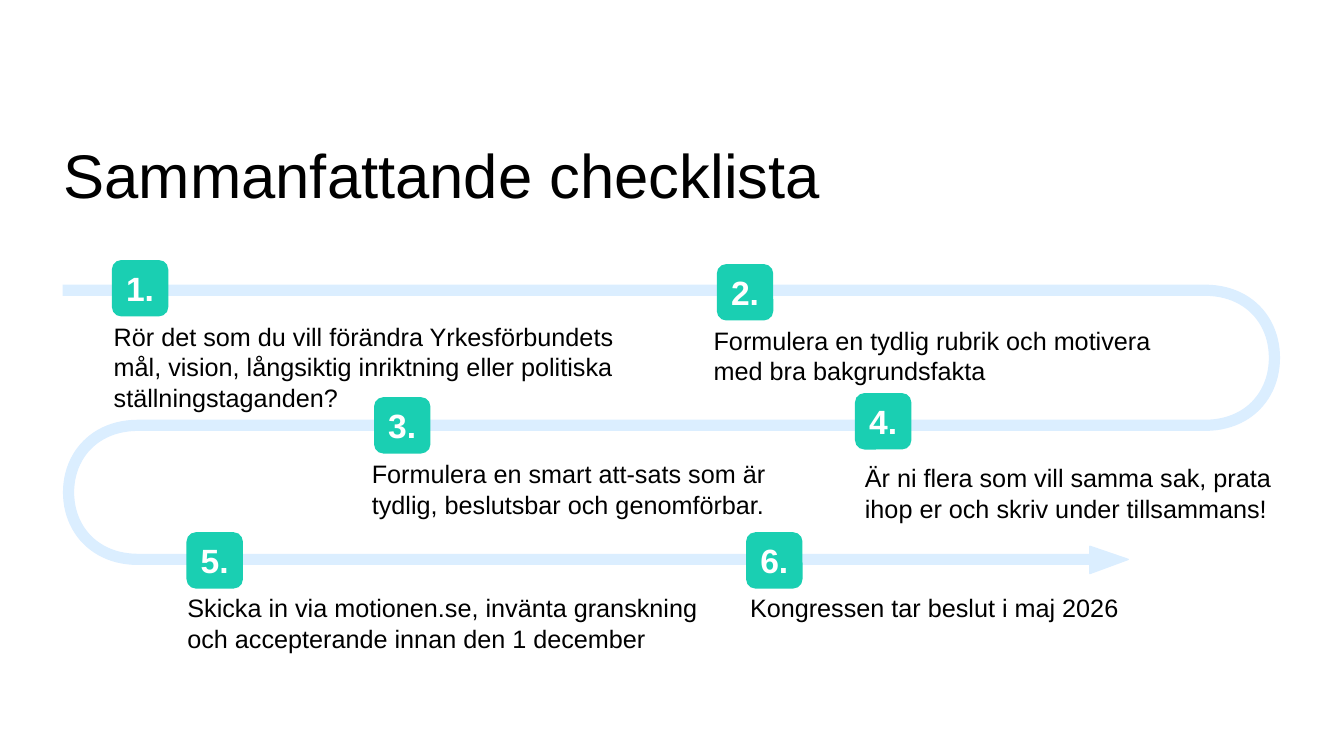
from pptx import Presentation
from pptx.dml.color import RGBColor
from pptx.enum.shapes import MSO_SHAPE
from pptx.enum.text import MSO_ANCHOR, MSO_AUTO_SIZE, PP_ALIGN
from pptx.util import Inches, Pt

ROUNDED = MSO_SHAPE.ROUNDED_RECTANGLE
TOP, MIDDLE, BOTTOM = MSO_ANCHOR.TOP, MSO_ANCHOR.MIDDLE, MSO_ANCHOR.BOTTOM
FIT_SHAPE, FIXED = MSO_AUTO_SIZE.SHAPE_TO_FIT_TEXT, MSO_AUTO_SIZE.NONE
LEFT, CENTER = PP_ALIGN.LEFT, PP_ALIGN.CENTER

COLORS = {"trail": "DBEEFF", "badge": "1ACFB2", "text": "000000", "number": "FFFFFF"}
FONT = "Arial"
BADGE_SIZE = 0.56

# Badge left and top, text left, top, width and height, wording
STEPS = [
    ((1.11, 2.58), (1.03, 3.14, 5.33, 1.01),
     "Rör det som du vill förändra Yrkesförbundets mål, vision, "
     "långsiktig inriktning eller politiska ställningstaganden?"),
    ((7.11, 2.62), (6.98, 3.18, 4.67, 0.71),
     "Formulera en tydlig rubrik och motivera med bra bakgrundsfakta"),
    ((3.71, 3.94), (3.59, 4.5, 4.23, 0.71),
     "Formulera en smart att-sats som är tydlig, beslutsbar och genomförbar."),
    ((8.48, 3.9), (8.48, 4.54, 4.23, 0.71),
     "Är ni flera som vill samma sak, prata ihop er och skriv under tillsammans!"),
    ((1.85, 5.28), (1.76, 5.83, 5.35, 0.71),
     "Skicka in via motionen.se, invänta granskning och accepterande "
     "innan den 1 december"),
    ((7.4, 5.28), (7.34, 5.83, 4.02, 0.4), "Kongressen tar beslut i maj 2026"),
]

TRAIL_ROWS = [2.88, 4.22, 5.55]
TRAIL_START, TRAIL_END = 0.62, 10.97
RIGHT_TURN, LEFT_TURN = 11.95, 1.37
ARROW_HEAD = [(11.19, 5.55), (10.81, 5.42), (10.81, 5.69)]


def u_turn(edge, top, bottom, side, steps=24):
    """Points of a bend that bulges right (side 1) or left (side -1)."""
    middle = (top + bottom) / 2
    controls = [(0, top), (0.43, top), (0.69, top + 0.3), (0.69, middle)]
    quarter = []
    for step in range(steps + 1):
        t = step / steps
        weights = [(1 - t) ** 3, 3 * t * (1 - t) ** 2, 3 * t * t * (1 - t), t ** 3]
        bulge = sum(w * x for w, (x, _) in zip(weights, controls))
        y = sum(w * y for w, (_, y) in zip(weights, controls))
        quarter.append((edge + side * bulge, y))
    mirrored = [(x, top + bottom - y) for x, y in reversed(quarter[:-1])]
    return quarter + mirrored


class ChecklistSlide:
    def __init__(self, presentation):
        self.slide = presentation.slides.add_slide(presentation.slide_layouts[6])
        self.shapes = self.slide.shapes

    def color(self, name):
        return RGBColor.from_string(COLORS[name])

    def set_text(self, shape, text, frame_format, paragraph_format, font_format, color):
        frame = shape.text_frame
        frame.text = text
        paragraph = frame.paragraphs[0]
        font = paragraph.runs[0].font
        targets = ((frame, frame_format), (paragraph, paragraph_format),
                   (font, {"name": FONT, **font_format}))
        for target, values in targets:
            for name, value in values.items():
                setattr(target, name, value)
        font.color.rgb = self.color(color)

    def outline(self, points, width, closed):
        corners = [(Inches(x), Inches(y)) for x, y in points]
        builder = self.shapes.build_freeform(*corners[0])
        builder.add_line_segments(corners[1:], close=closed)
        shape = builder.convert_to_shape()
        shape.shadow.inherit = False
        if closed:
            shape.fill.solid()
            shape.fill.fore_color.rgb = self.color("trail")
        else:
            shape.fill.background()
        shape.line.color.rgb = self.color("trail")
        shape.line.width = Pt(width)

    def title(self, text, box):
        shape = self.shapes.add_textbox(*map(Inches, box))
        margins = dict.fromkeys(
            ("margin_left", "margin_top", "margin_right", "margin_bottom"), 0)
        self.set_text(shape, text,
                      {"word_wrap": True, "auto_size": FIXED,
                       "vertical_anchor": BOTTOM, **margins},
                      {"alignment": LEFT, "line_spacing": 0.9},
                      {"size": Pt(44)}, "text")

    def badge(self, number, left, top):
        shape = self.shapes.add_shape(
            ROUNDED, *map(Inches, (left, top, BADGE_SIZE, BADGE_SIZE)))
        shape.shadow.inherit = False
        shape.fill.solid()
        shape.fill.fore_color.rgb = self.color("badge")
        shape.line.fill.background()
        self.set_text(shape, f"{number}.",
                      {"word_wrap": True, "vertical_anchor": MIDDLE,
                       "margin_left": Inches(0.04), "margin_right": Inches(0.04)},
                      {"alignment": CENTER}, {"size": Pt(24), "bold": True}, "number")

    def step_text(self, text, box):
        shape = self.shapes.add_textbox(*map(Inches, box))
        self.set_text(shape, text,
                      {"word_wrap": True, "auto_size": FIT_SHAPE,
                       "vertical_anchor": TOP},
                      {"alignment": LEFT, "space_after": Pt(4)},
                      {"size": Pt(18)}, "text")


def main():
    presentation = Presentation()
    presentation.slide_width = Inches(13.33)
    presentation.slide_height = Inches(7.5)
    checklist = ChecklistSlide(presentation)

    first, second, third = TRAIL_ROWS
    trail = [(TRAIL_START, first), *u_turn(RIGHT_TURN, first, second, 1),
             *u_turn(LEFT_TURN, second, third, -1), (TRAIL_END, third)]
    checklist.outline(trail, 8, closed=False)
    checklist.outline(ARROW_HEAD, 1, closed=True)
    checklist.title("Sammanfattande checklista", (0.63, 0.55, 12.08, 1.55))
    for number, (badge_place, text_box, text) in enumerate(STEPS, start=1):
        checklist.badge(number, *badge_place)
        checklist.step_text(text, text_box)

    presentation.save("out.pptx")


if __name__ == "__main__":
    main()
